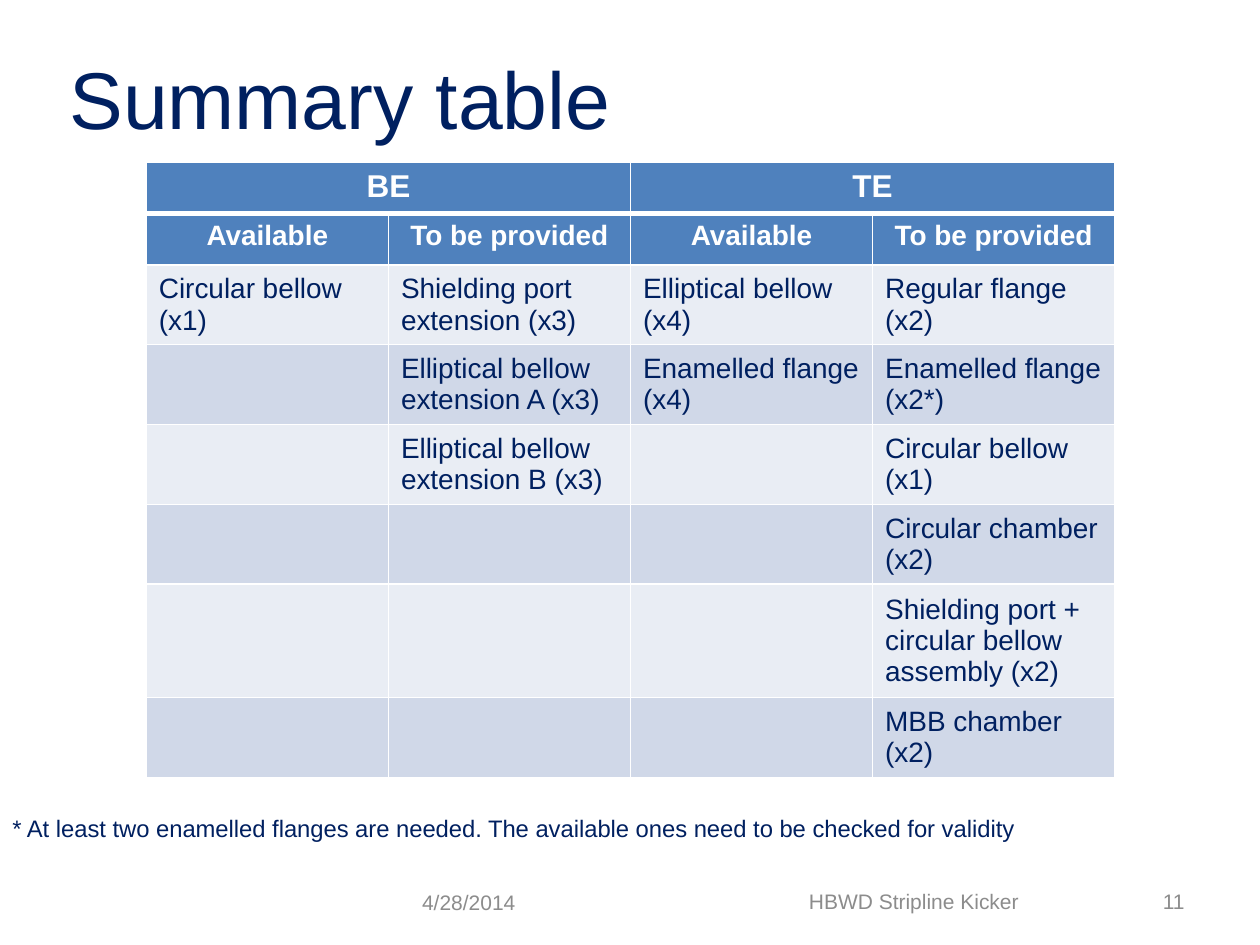
import pptx
import pptx.util
import pptx.dml.color
import pptx.enum.text
import pptx.oxml.ns
import lxml.etree

Cm, Pt = pptx.util.Cm, pptx.util.Pt
RGBColor = pptx.dml.color.RGBColor
PP_ALIGN = pptx.enum.text.PP_ALIGN
MSO_ANCHOR = pptx.enum.text.MSO_ANCHOR

NAVY = RGBColor(0x00, 0x20, 0x60)
GRAY = RGBColor(0x8C, 0x8C, 0x8C)
WHITE = RGBColor(0xFF, 0xFF, 0xFF)
HEADER_BLUE = RGBColor(0x4F, 0x81, 0xBD)
BANDS = [RGBColor(0xE9, 0xED, 0xF4), RGBColor(0xD0, 0xD8, 0xE8)]


def write(tf, text, size, color, align=PP_ALIGN.LEFT, bold=False):
    p = tf.paragraphs[0]
    p.alignment = align
    r = p.add_run()
    r.text = text
    r.font.name = "Arial"
    r.font.size = Pt(size)
    r.font.bold = bold
    r.font.color.rgb = color


def add_border(cell, side, width):
    """Draw a white line on one side (L, R, T or B); call before setting the fill."""
    qn = pptx.oxml.ns.qn
    tc_pr = cell._tc.get_or_add_tcPr()
    ln = lxml.etree.SubElement(tc_pr, qn(f"a:ln{side}"), w=str(Pt(width)))
    fill = lxml.etree.SubElement(ln, qn("a:solidFill"))
    lxml.etree.SubElement(fill, qn("a:srgbClr"), val=str(WHITE))


prs = pptx.Presentation()
prs.slide_width = Cm(25.4)
prs.slide_height = Cm(19.05)
s = prs.slides.add_slide(prs.slide_layouts[6])

# Title, footnote and footer: left, top, width, height, text, size, color, align, anchor
texts = [
    (1.27, 0.66, 22.86, 2.62, "Summary table", 46, NAVY, PP_ALIGN.LEFT, MSO_ANCHOR.MIDDLE),
    (0, 16.28, 21.95, 0.76,
     "* At least two enamelled flanges are needed. The available ones need to be checked for validity",
     13.6, NAVY, PP_ALIGN.LEFT, MSO_ANCHOR.TOP),
    (8.26, 17.68, 5.92, 1.02, "4/28/2014", 12, GRAY, PP_ALIGN.LEFT, MSO_ANCHOR.MIDDLE),
    (14.4, 17.65, 8.05, 1.02, "HBWD Stripline Kicker", 12, GRAY, PP_ALIGN.CENTER, MSO_ANCHOR.MIDDLE),
    (22.73, 17.65, 1.4, 1.02, "11", 12, GRAY, PP_ALIGN.RIGHT, MSO_ANCHOR.MIDDLE),
]
for left, top, width, height, text, size, color, align, anchor in texts:
    sp = s.shapes.add_textbox(Cm(left), Cm(top), Cm(width), Cm(height))
    tf = sp.text_frame
    tf.word_wrap = True
    tf.vertical_anchor = anchor
    if text == "Summary table":
        tf.margin_left = tf.margin_right = Cm(0.13)
    write(tf, text, size, color, align)

# Summary table
rows = [
    ["BE", "", "TE", ""],
    ["Available", "To be provided", "Available", "To be provided"],
    ["Circular bellow (x1)", "Shielding port extension (x3)", "Elliptical bellow (x4)", "Regular flange (x2)"],
    ["", "Elliptical bellow extension A (x3)", "Enamelled flange (x4)", "Enamelled flange (x2*)"],
    ["", "Elliptical bellow extension B (x3)", "", "Circular bellow (x1)"],
    ["", "", "", "Circular chamber (x2)"],
    ["", "", "", "Shielding port + circular bellow assembly (x2)"],
    ["", "", "", "MBB chamber (x2)"],
]
row_heights = [1.03, 1.03, 1.5, 1.5, 1.5, 1.5, 2.14, 1.5]
table = s.shapes.add_table(len(rows), 4, Cm(2.95), Cm(3.28), Cm(19.5), Cm(sum(row_heights))).table
for column in table.columns:
    column.width = Cm(4.88)
for row, height in zip(table.rows, row_heights):
    row.height = Cm(height)
for c in (0, 2):
    table.cell(0, c).merge(table.cell(0, c + 1))

for i, row in enumerate(rows):
    header = i < 2
    for j, text in enumerate(row):
        cell = table.cell(i, j)
        for side in "LRTB":
            thick = (i, side) in [(0, "B"), (1, "T")]
            add_border(cell, side, 3 if thick else 1)
        cell.fill.solid()
        cell.fill.fore_color.rgb = HEADER_BLUE if header else BANDS[i % 2]
        cell.vertical_anchor = MSO_ANCHOR.TOP if header else MSO_ANCHOR.MIDDLE
        if text:
            write(cell.text_frame, text, 18 if i == 0 else 16, WHITE if header else NAVY,
                  PP_ALIGN.CENTER if header else PP_ALIGN.LEFT, header)

prs.save("out.pptx")
